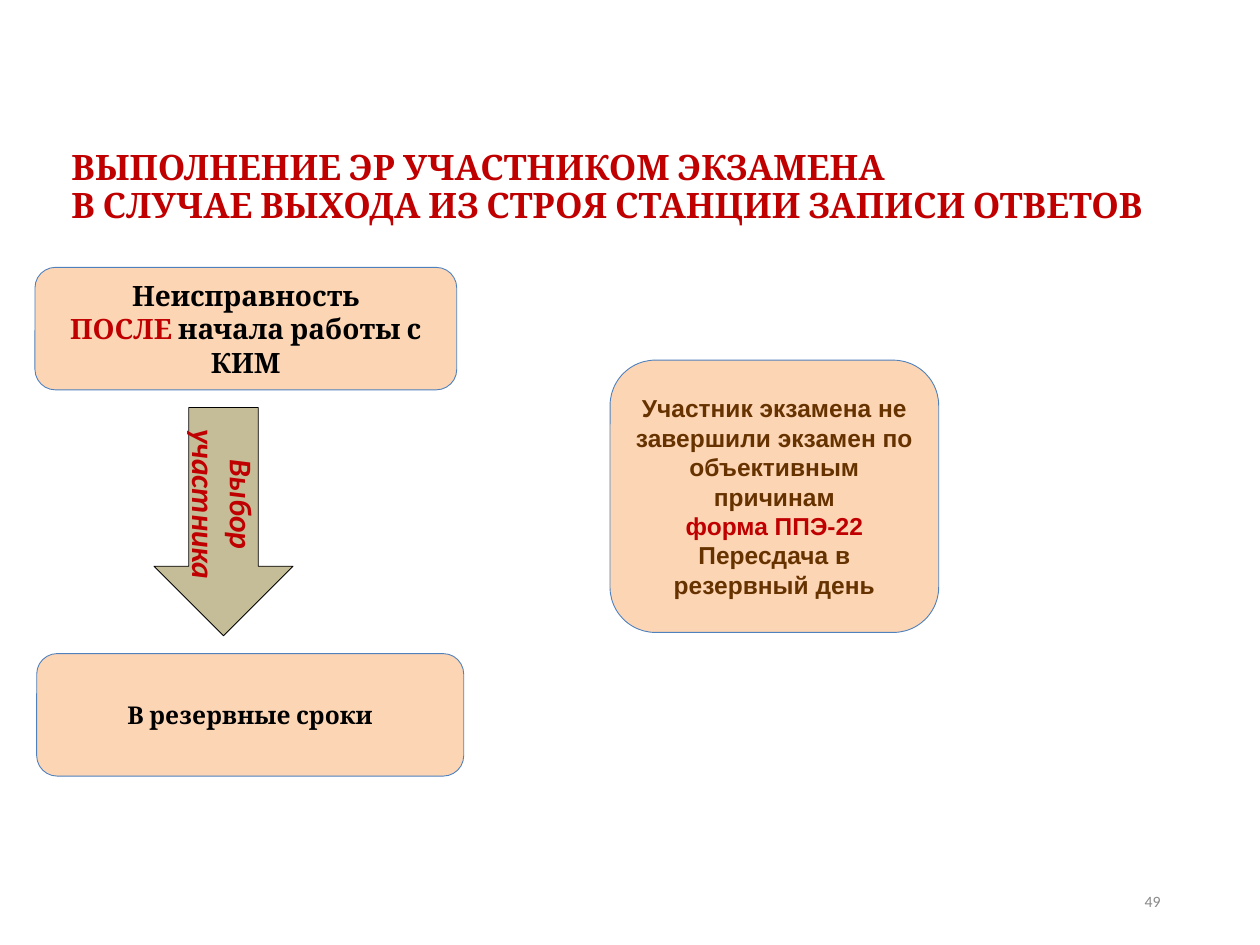
from pptx import Presentation
from pptx.dml.color import RGBColor
from pptx.enum.shapes import MSO_SHAPE
from pptx.enum.text import MSO_ANCHOR, PP_ALIGN
from pptx.util import Pt

COLORS = {
    "red": "C00000",
    "black": "000000",
    "brown": "663300",
    "gray": "898989",
    "peach": "FCD5B5",
    "blue": "4F81BD",
    "khaki": "C4BD97",
}


def color(name):
    return RGBColor.from_string(COLORS[name])


def add_span(para, text, *, font, size, ink, bold=True, italic=False):
    span = para.add_run()
    span.text = text
    span.font.name = font
    span.font.size = Pt(size)
    span.font.bold = bold
    span.font.italic = italic
    span.font.color.rgb = color(ink)


class SlideBuilder:
    def __init__(self, page):
        self.page = page
        self.line_width = Pt(0.5)

    def fill_text(self, shape, paragraphs, align, spacing=None, **style):
        frame = shape.text_frame
        frame.word_wrap = True
        frame.vertical_anchor = MSO_ANCHOR.MIDDLE
        for index, spans in enumerate(paragraphs):
            para = frame.add_paragraph() if index else frame.paragraphs[0]
            para.alignment = align
            if spacing:
                para.line_spacing = spacing
            for text, ink in spans:
                for number, line in enumerate(text.split("\n")):
                    if number:
                        para.add_line_break()
                    add_span(para, line, ink=ink, **style)

    def text(self, place, paragraphs, align=PP_ALIGN.LEFT, **style):
        box = self.page.shapes.add_textbox(*map(Pt, place))
        self.fill_text(box, paragraphs, align, **style)

    def shape(self, kind, place, paragraphs, fill, line, rotation=0, **style):
        shape = self.page.shapes.add_shape(kind, *map(Pt, place))
        shape.shadow.inherit = False
        shape.rotation = rotation
        shape.fill.solid()
        shape.fill.fore_color.rgb = color(fill)
        shape.line.color.rgb = color(line)
        shape.line.width = self.line_width
        self.fill_text(shape, paragraphs, PP_ALIGN.CENTER, **style)

    def card(self, place, paragraphs, **style):
        self.shape(MSO_SHAPE.ROUNDED_RECTANGLE, place, paragraphs, "peach", "blue", **style)

    def down_arrow(self, place, paragraphs, **style):
        self.shape(MSO_SHAPE.RIGHT_ARROW, place, paragraphs, "khaki", "black",
                   rotation=90, **style)


def main():
    deck = Presentation()
    deck.slide_width, deck.slide_height = Pt(720), Pt(540)
    builder = SlideBuilder(deck.slides.add_slide(deck.slide_layouts[6]))

    builder.text((508.3, 500.4, 162, 28.8), [[("49", "gray")]], PP_ALIGN.RIGHT,
                 font="Calibri", size=9, bold=False)
    title = ("ВЫПОЛНЕНИЕ ЭР УЧАСТНИКОМ ЭКЗАМЕНА\n"
             "В СЛУЧАЕ ВЫХОДА ИЗ СТРОЯ СТАНЦИИ ЗАПИСИ ОТВЕТОВ")
    builder.text((33.8, 62.6, 648, 90), [[(title, "red")]],
                 spacing=0.9, font="Cambria", size=20)

    builder.card((20, 152.8, 241, 70), [
        [("Неисправность", "black")],
        [("ПОСЛЕ", "red"), (" начала работы с КИМ", "black")],
    ], font="Cambria", size=16)
    builder.card((21, 373.5, 244, 70), [[("В резервные сроки", "black")]],
                 font="Cambria", size=14)
    builder.down_arrow((62.5, 258.4, 130.4, 79.4), [[("Выбор участника", "red")]],
                       font="Calibri", size=18, italic=True)
    builder.card((348.6, 205.8, 187.8, 155.6), [
        [("Участник экзамена не завершили экзамен по объективным причинам", "brown")],
        [("форма ППЭ-22", "red")],
        [("Пересдача в резервный день", "brown")],
    ], font="Arial", size=14)

    deck.save("out.pptx")


if __name__ == "__main__":
    main()
